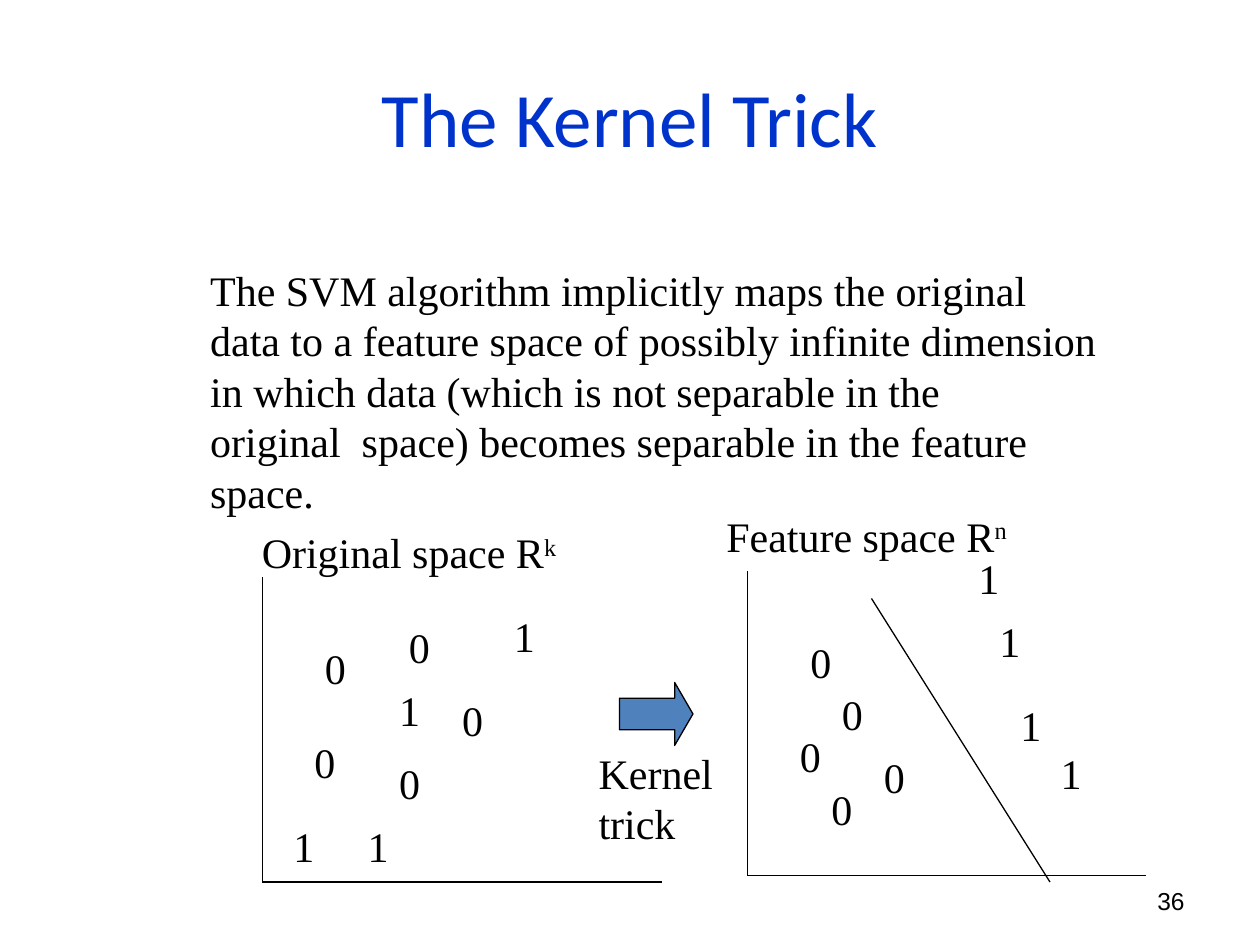
import pptx
import pptx.dml.color
import pptx.enum.shapes
import pptx.enum.text
import pptx.util
from dataclasses import dataclass
from lxml import etree
from pptx.oxml.ns import qn
from pptx.util import Pt


@dataclass(frozen=True)
class Theme:
    black = pptx.dml.color.RGBColor.from_string("000000")
    title_blue = pptx.dml.color.RGBColor.from_string("0033CC")
    arrow_blue = pptx.dml.color.RGBColor.from_string("4F81BD")
    body_font = "Times New Roman"
    title_font = "Calibri"
    number_font = "Arial"
    body_size = Pt(24)
    title_size = Pt(44)
    number_size = Pt(14)
    line_width = Pt(0.75)


theme = Theme()
ALIGN = pptx.enum.text.PP_ALIGN
ANCHOR = pptx.enum.text.MSO_ANCHOR
AUTO = pptx.enum.text.MSO_AUTO_SIZE


def add_text(x, y, w, h, lines, font=theme.body_font, size=theme.body_size,
             color=theme.black, align=ALIGN.LEFT, anchor=ANCHOR.TOP, wrap=False):
    """Add a text box, one paragraph a line; unwrapped boxes fit their text."""
    tf = s.shapes.add_textbox(Pt(x), Pt(y), Pt(w), Pt(h)).text_frame
    tf.word_wrap = wrap
    tf.auto_size = AUTO.NONE if wrap else AUTO.SHAPE_TO_FIT_TEXT
    tf.vertical_anchor = anchor
    for i, line in enumerate(lines):
        p = tf.add_paragraph() if i else tf.paragraphs[0]
        p.alignment = align
        p.font.name, p.font.size = font, size
        p.font.color.rgb = color
        p.add_run().text = line
    return tf


def add_line(x1, y1, x2, y2):
    line = s.shapes.add_connector(pptx.enum.shapes.MSO_CONNECTOR.STRAIGHT,
                                  Pt(x1), Pt(y1), Pt(x2), Pt(y2))
    line.line.color.rgb = theme.black
    line.line.width = theme.line_width
    etree.SubElement(line._element.spPr, qn("a:effectLst"))


prs = pptx.Presentation()
prs.slide_width, prs.slide_height = Pt(720), Pt(540)
s = prs.slides.add_slide(prs.slide_layouts[6])

add_text(516, 500.4, 168, 28.8, ["36"], theme.number_font, theme.number_size,
         align=ALIGN.RIGHT, anchor=ANCHOR.MIDDLE, wrap=True)
add_text(36, 21.6, 648, 90, ["The Kernel Trick"], theme.title_font,
         theme.title_size, theme.title_blue, ALIGN.CENTER, ANCHOR.MIDDLE, True)
add_text(113, 147.6, 546.5, 122.4, [
    "The SVM algorithm implicitly maps the original",
    "data to a feature space of possibly infinite dimension",
    "in which data (which is not separable in the",
    "original  space) becomes separable in the feature space.",
], wrap=True)

# Each space: label, exponent, label box, axis origin, places of each digit
spaces = [
    ("Original space R", "k", (142.5, 297.5, 183.5, 36), (150, 504), {
        "0": [(178.5, 363.5), (226.5, 351.5), (172.5, 417.5), (221, 429.5), (257, 393.5)],
        "1": [(221, 387.5), (160.5, 465.5), (203, 465.5), (286.5, 345.5)]}),
    ("Feature space R", "n", (408, 288, 175.5, 36), (427, 500.5), {
        "0": [(456, 360), (474, 390), (450, 414), (498, 426), (468, 444)],
        "1": [(564, 348), (552, 312), (576, 396), (599, 423.5)]}),
]
AXIS_WIDTH, AXIS_HEIGHT = 228, 174

for label, exponent, box, (x, y), digits in spaces:
    add_line(x, y - AXIS_HEIGHT, x, y)
    add_line(x, y, x + AXIS_WIDTH, y)
    r = add_text(*box, [label]).paragraphs[0].add_run()
    r.text = exponent
    r._r.get_or_add_rPr().set("baseline", "30000")
    for digit, places in digits.items():
        for left, top in places:
            add_text(left, top, 26.5, 36, [digit])

add_line(498, 342, 600, 504)  # separating boundary in the feature space

arrow = s.shapes.add_shape(pptx.enum.shapes.MSO_SHAPE.RIGHT_ARROW,
                           Pt(354), Pt(390), Pt(42), Pt(36))
arrow.adjustments[0], arrow.adjustments[1] = 0.5, 0.29
arrow.shadow.inherit = False
arrow.fill.solid()
arrow.fill.fore_color.rgb = theme.arrow_blue
arrow.line.color.rgb = theme.black
arrow.line.width = theme.line_width
add_text(335, 423.5, 80, 65, ["Kernel", "trick"])

prs.save("out.pptx")
